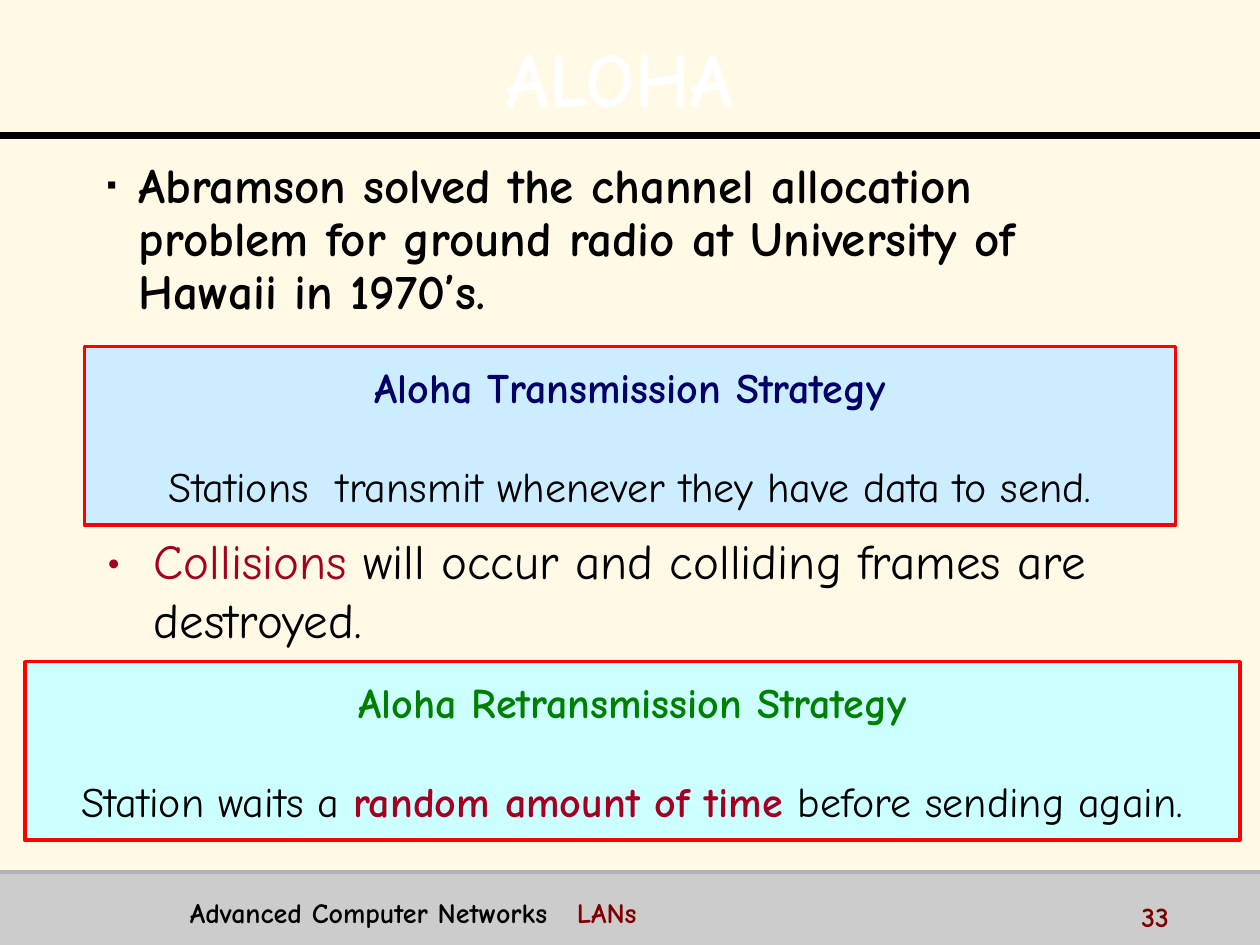
from typing import NamedTuple

from lxml.etree import SubElement as Sub
from pptx import Presentation
from pptx.dml.color import RGBColor
from pptx.enum.shapes import MSO_CONNECTOR as Conn, MSO_SHAPE as Kind
from pptx.enum.text import MSO_ANCHOR as Anchor, MSO_AUTO_SIZE as Fit, PP_ALIGN as Align
from pptx.oxml.ns import qn
from pptx.util import Cm, Pt

FONT = "Comic Neue"
BLACK, WHITE, RED, WINE, MAROON = "000000", "FFFFFF", "FF0000", "A50021", "800000"
WIDE = 25.4


class Run(NamedTuple):
    text: str
    color: str = BLACK
    bold: bool = False


class Panel(NamedTuple):
    box: tuple
    fill: str
    head: Run
    body: list


class Rule(NamedTuple):
    top: float
    color: str
    width: float


PANELS = [
    Panel((1.7, 6.99, 22, 3.6), "CCECFF",
          Run("Aloha Transmission Strategy", "000066", True),
          [Run("Stations  transmit whenever they have data to send.")]),
    Panel((0.5, 13.34, 24.5, 3.6), "CCFFFF",
          Run("Aloha Retransmission Strategy", "008000", True),
          [Run("Station waits a "),
           Run("random amount of time ", WINE, True),
           Run("before sending again.")]),
]
RULES = [Rule(2.74, BLACK, 4), Rule(17.58, "B2B2B2", 2)]


def paint(part, color: str) -> None:
    """Set a solid colour on a fill or a font's fill."""
    part.solid()
    part.fore_color.rgb = RGBColor.from_string(color)


def place(shape, box: tuple) -> None:
    shape.left, shape.top, shape.width, shape.height = map(Cm, box)


def write(para, runs: list, size: float) -> None:
    for item in runs:
        run = para.add_run()
        run.text = item.text
        font = run.font
        font.name, font.size, font.bold = FONT, Pt(size), item.bold
        paint(font.fill, item.color)


def bullet(para, char: str, color: str, scale: int, indent: float) -> None:
    props = para._p.get_or_add_pPr()
    props.set("marL", str(Cm(indent)))
    props.set("indent", str(-Cm(indent)))
    Sub(Sub(props, qn("a:buClr")), qn("a:srgbClr"), val=color)
    Sub(props, qn("a:buSzPct"), val=str(scale * 1000))
    Sub(props, qn("a:buFont"), typeface=FONT)
    Sub(props, qn("a:buChar"), char=char)


def tab(para, pos: float) -> None:
    tabs = Sub(para._p.get_or_add_pPr(), qn("a:tabLst"))
    Sub(tabs, qn("a:tab"), pos=str(Cm(pos)), algn="l")


def shade(run) -> None:
    """Give the letters a hard black shadow, just after their fill."""
    props = run._r.get_or_add_rPr()
    effects = Sub(props, qn("a:effectLst"))
    outer = Sub(effects, qn("a:outerShdw"), dist=str(Pt(2)), dir="2700000")
    Sub(outer, qn("a:srgbClr"), val=BLACK)
    props.find(qn("a:solidFill")).addnext(effects)


def add_text(slide, box: tuple):
    frame = slide.shapes.add_textbox(*map(Cm, box)).text_frame
    frame.word_wrap = True
    return frame.paragraphs[0]


def add_rect(slide, box: tuple, fill: str):
    rect = slide.shapes.add_shape(Kind.RECTANGLE, *map(Cm, box))
    rect.shadow.inherit = False
    paint(rect.fill, fill)
    rect.line.fill.background()
    return rect


def add_rule(slide, rule: Rule) -> None:
    line = slide.shapes.add_connector(
        Conn.STRAIGHT, 0, Cm(rule.top), Cm(WIDE), Cm(rule.top))
    paint(line.line.fill, rule.color)
    line.line.width = Pt(rule.width)
    Sub(line._element.spPr, qn("a:effectLst"))


def add_panel(slide, panel: Panel) -> None:
    rect = add_rect(slide, panel.box, panel.fill)
    paint(rect.line.fill, RED)
    rect.line.width = Pt(2)
    frame = rect.text_frame
    frame.word_wrap = False
    frame.vertical_anchor = Anchor.MIDDLE
    head, body = frame.paragraphs[0], frame.add_paragraph()
    head.alignment = body.alignment = Align.CENTER
    body.space_before = Pt(28)
    write(head, [panel.head], 24)
    write(body, panel.body, 24)


def main() -> None:
    deck = Presentation()
    deck.slide_width, deck.slide_height = Cm(WIDE), Cm(19.05)
    slide = deck.slides.add_slide(deck.slide_layouts[1])
    paint(slide.background.fill, "FFF9E6")

    # Footer band and rules
    add_rect(slide, (0, 17.58, WIDE, 1.47), "CCCCCC")
    for rule in RULES:
        add_rule(slide, rule)

    # Title
    title = slide.shapes.title
    place(title, (1.7, 0.18, 21.59, 2.54))
    title.text_frame.auto_size = Fit.NONE
    title.text_frame.vertical_anchor = Anchor.MIDDLE
    para = title.text_frame.paragraphs[0]
    para.alignment, para.line_spacing = Align.CENTER, 1.1
    write(para, [Run("ALOHA", WHITE, True)], 44)
    shade(para.runs[0])

    # Lead bullet
    body = slide.placeholders[1]
    place(body, (1.9, 3.12, 21.59, 3.6))
    body.text_frame.auto_size = Fit.NONE
    para = body.text_frame.paragraphs[0]
    bullet(para, "▪", BLACK, 50, 0.64)
    para.line_spacing, para.space_before = 0.9, Pt(0)
    write(para, [Run("Abramson solved the channel allocation problem for ground "
                     "radio at University of Hawaii in 1970’s.", BLACK, True)], 28)

    # Strategy panels
    for panel in PANELS:
        add_panel(slide, panel)

    # Collision bullet
    para = add_text(slide, (1.9, 10.58, 21.59, 2.74))
    bullet(para, "•", WINE, 100, 0.95)
    write(para, [Run("Collisions ", WINE),
                 Run("will occur and colliding frames are destroyed.")], 28)

    # Footer text and page number
    para = add_text(slide, (3.58, 17.93, 18.5, 0.8))
    tab(para, 7.8)
    write(para, [Run("Advanced Computer Networks\t", BLACK, True),
                 Run("LANs", MAROON, True)], 16)
    para = add_text(slide, (22.76, 18, 2.54, 0.64))
    write(para, [Run("33", MAROON, True)], 16)

    deck.save("out.pptx")


if __name__ == "__main__":
    main()
